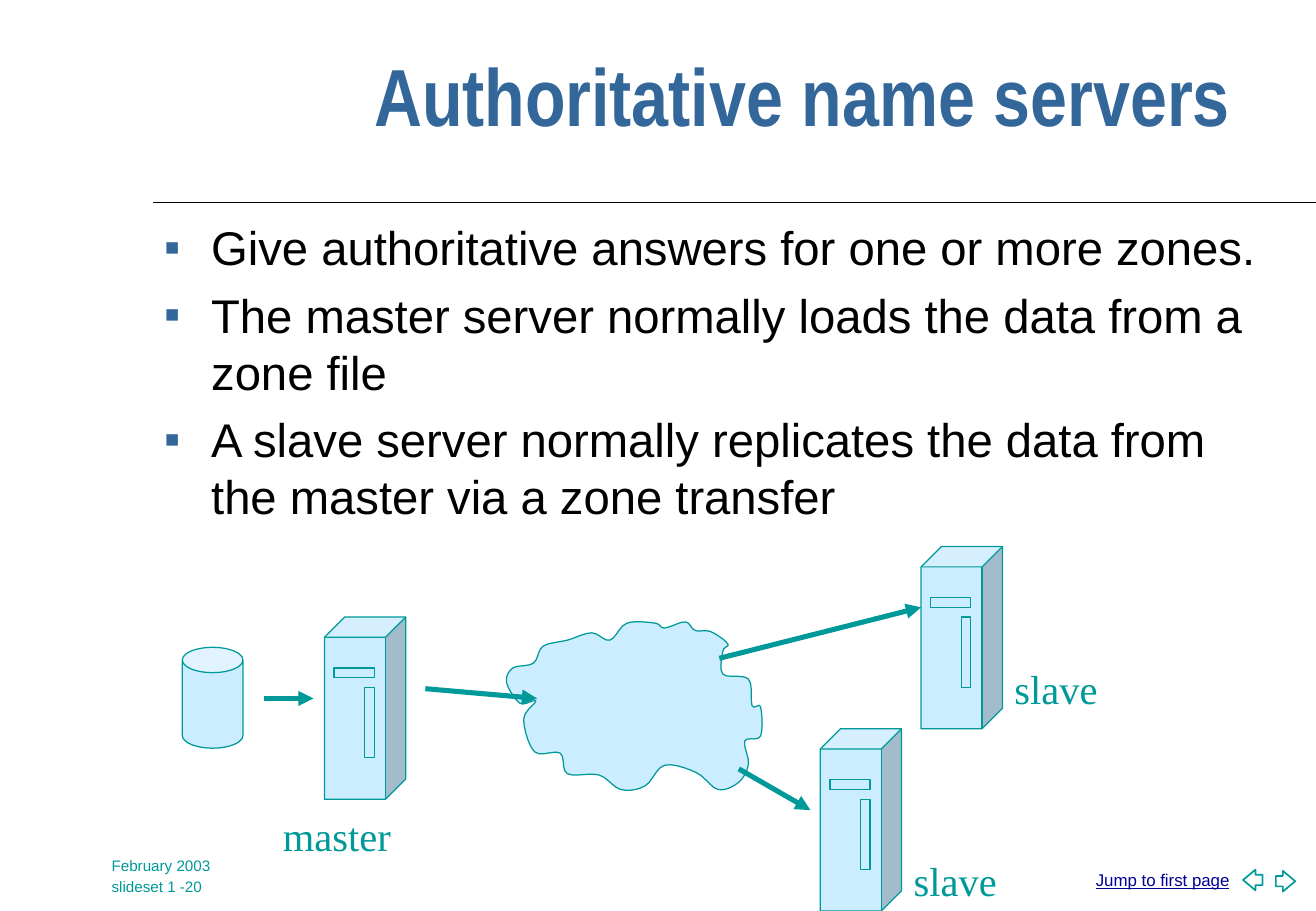
"""Build the slide on authoritative name servers with its replication diagram."""
from lxml import etree
from pptx import Presentation
from pptx.dml.color import RGBColor
from pptx.enum import shapes, text
from pptx.oxml.ns import qn
from pptx.util import Inches, Pt

COLORS = {"teal": "009999", "ice": "CCECFF", "blue": "336699",
          "ink": "010000", "link": "000099", "white": "FFFFFF"}
KIND = shapes.MSO_SHAPE

prs = Presentation()
prs.slide_width, prs.slide_height = Inches(10.83), Inches(7.5)
s = prs.slides.add_slide(prs.slide_layouts[5])


def style_shape(sp, fill="ice", width=0.75):
    sp.shadow.inherit = False
    sp.fill.solid()
    sp.fill.fore_color.rgb = RGBColor.from_string(COLORS[fill])
    sp.line.color.rgb = RGBColor.from_string(COLORS["teal"])
    sp.line.width = Pt(width)


def style_font(p, name, size, color):
    p.font.name, p.font.size = name, Pt(size)
    p.font.color.rgb = RGBColor.from_string(COLORS[color])


title = s.shapes.title
title.left, title.top, title.width, title.height = map(Inches, (2.98, 0.25, 7.35, 1.25))
tf = title.text_frame
tf.text = "Authoritative name servers"
tf.word_wrap = True
tf.auto_size = text.MSO_AUTO_SIZE.NONE
tf.vertical_anchor = text.MSO_ANCHOR.MIDDLE
p = tf.paragraphs[0]
p.alignment = text.PP_ALIGN.LEFT
p.line_spacing = 0.7
p.font.bold = True
style_font(p, "Arial Narrow", 48, "blue")

tf = s.shapes.add_textbox(*map(Inches, (1.26, 1.75, 9.3, 4.92))).text_frame
tf.word_wrap = True
tf.text = "\n".join([
    "Give authoritative answers for one or more zones.",
    "The master server normally loads the data from a zone file",
    "A slave server normally replicates the data from the master via a zone transfer",
])
for p in tf.paragraphs:
    style_font(p, "Arial", 28, "ink")
    p.space_before = Pt(6.5)
    pPr = p._p.get_or_add_pPr()
    pPr.set("marL", str(Inches(0.38)))
    pPr.set("indent", str(-Inches(0.38)))
    bullet = [etree.Element(qn(tag)) for tag in ("a:buClr", "a:buSzPct", "a:buFont", "a:buChar")]
    etree.SubElement(bullet[0], qn("a:srgbClr"), val=COLORS["blue"])
    bullet[1].set("val", "50000")
    bullet[2].set("typeface", "Arial")
    bullet[3].set("char", "■")
    pPr.find(qn("a:spcBef")).addnext(bullet[0])
    for before, after in zip(bullet, bullet[1:]):
        before.addnext(after)

can = s.shapes.add_shape(KIND.CAN, *map(Inches, (1.5, 5.33, 0.5, 0.83)))
can.adjustments[0] = 0.417
style_shape(can)

for x, y in [(2.67, 5.08), (7.58, 4.5), (6.75, 6)]:
    server = s.shapes.add_group_shape()
    for kind, dx, dy, w, h in [(KIND.CUBE, 0, 0, 0.67, 1.5),
                               (KIND.RECTANGLE, 0.08, 0.42, 0.33, 0.08),
                               (KIND.RECTANGLE, 0.33, 0.58, 0.08, 0.58)]:
        style_shape(server.shapes.add_shape(kind, *map(Inches, (x + dx, y + dy, w, h))))

cloud = [
    (5.02, 5.27), (4.87, 5.21), (4.67, 5.27), (4.47, 5.32), (4.39, 5.46),
    (4.22, 5.5), (4.17, 5.62), (4.28, 5.79), (4.41, 5.77), (4.31, 5.92),
    (4.4, 6.19), (4.61, 6.2), (4.67, 6.37), (4.93, 6.38), (5.11, 6.5),
    (5.31, 6.47), (5.47, 6.3), (5.73, 6.36), (5.91, 6.5), (6.08, 6.44),
    (6.16, 6.29), (6.13, 6.1), (6.26, 6.06), (6.26, 5.82), (6.19, 5.81),
    (6.16, 5.59), (5.95, 5.55), (5.95, 5.36), (5.99, 5.3), (5.85, 5.2),
    (5.72, 5.19), (5.64, 5.12), (5.47, 5.17), (5.39, 5.13), (5.16, 5.13),
]
outline = []
for i in range(len(cloud)):
    near = [cloud[(i + k) % len(cloud)] for k in (-1, 0, 1, 2)]
    for t in (0.2, 0.4, 0.6, 0.8, 1):
        outline.append(tuple(
            Inches(b + t * (c - a + t * (2 * a - 5 * b + 4 * c - d + t * (3 * b - 3 * c + d - a))) / 2)
            for a, b, c, d in zip(*near)))
builder = s.shapes.build_freeform(*map(Inches, cloud[0]))
builder.add_line_segments(outline, close=True)
style_shape(builder.convert_to_shape())

for ends, color, width, arrow in [
    ((1.26, 1.67, 10.83, 1.67), "ink", 0.75, False),
    ((2.17, 5.75, 2.58, 5.75), "teal", 3, True),
    ((3.5, 5.67, 4.42, 5.75), "teal", 3, True),
    ((5.92, 5.42, 7.58, 5), "teal", 3, True),
    ((6.08, 6.33, 6.67, 6.67), "teal", 3, True),
]:
    line = s.shapes.add_connector(shapes.MSO_CONNECTOR.STRAIGHT, *map(Inches, ends))
    line.line.color.rgb = RGBColor.from_string(COLORS[color])
    line.line.width = Pt(width)
    if arrow:
        etree.SubElement(line.line._get_or_add_ln(), qn("a:tailEnd"), type="triangle")
    etree.SubElement(line._element.spPr, qn("a:effectLst"))

for label, box, font, size, color in [
    ("master", (2.23, 6.63, 1.09, 0.5), "Times New Roman", 24, "teal"),
    ("slave", (8.25, 5.42, 0.89, 0.5), "Times New Roman", 24, "teal"),
    ("slave", (7.42, 7, 0.89, 0.5), "Times New Roman", 24, "teal"),
    ("February 2003", (0.82, 7, 1.26, 0.17), "Arial", 9, "teal"),
    ("slideset 1 -20", (0.82, 7.17, 1, 0.17), "Arial", 9, "teal"),
    ("Jump to first page", (8.92, 7.11, 1.33, 0.39), "Arial", 10, "link"),
]:
    tf = s.shapes.add_textbox(*map(Inches, box)).text_frame
    tf.text = label
    p = tf.paragraphs[0]
    style_font(p, font, size, color)
    p.font.underline = color == "link"

for kind, x, y in [(KIND.LEFT_ARROW, 10.23, 7.16), (KIND.RIGHT_ARROW, 10.5, 7.17)]:
    button = s.shapes.add_shape(kind, *map(Inches, (x, y, 0.16, 0.17)))
    button.adjustments[1] = 0.638
    style_shape(button, "white", 1)

prs.save("out.pptx")
